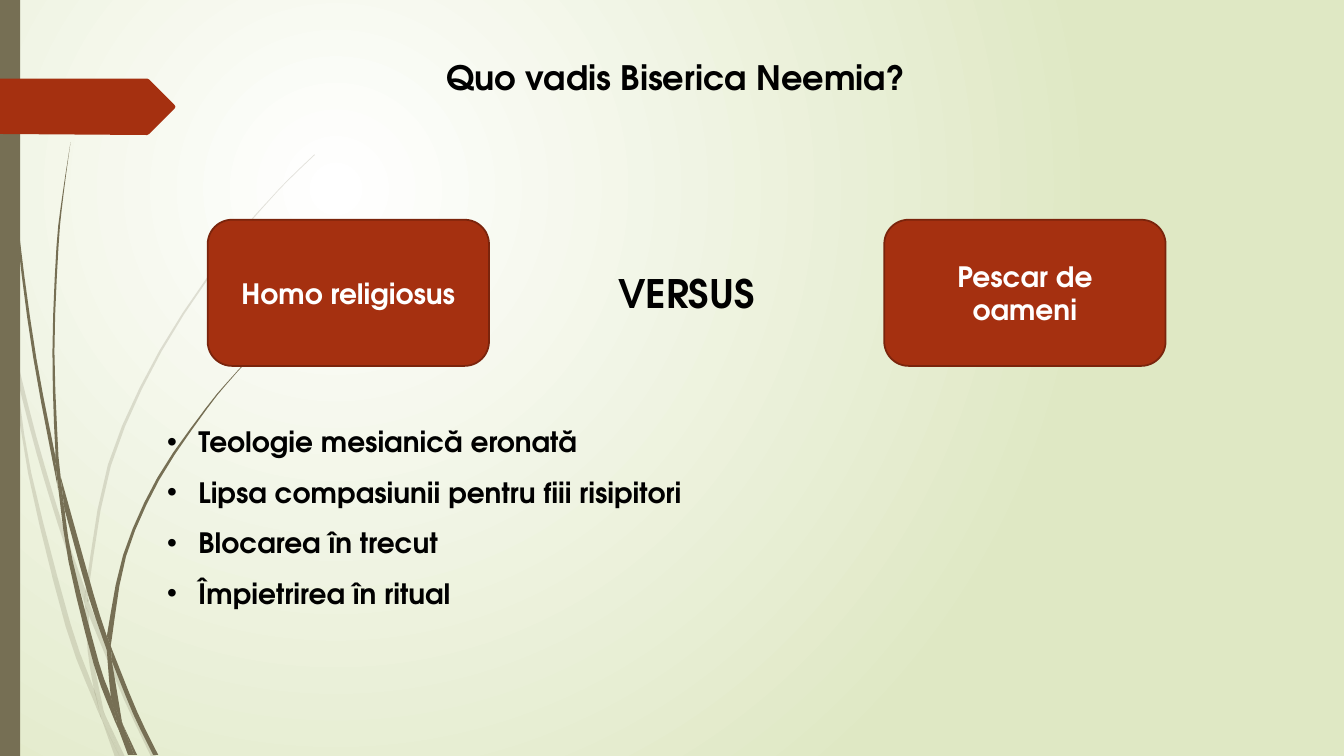
from lxml.etree import SubElement
from pptx import Presentation
from pptx.dml.color import RGBColor
from pptx.enum.shapes import MSO_SHAPE
from pptx.enum.text import MSO_ANCHOR, MSO_AUTO_SIZE, PP_ALIGN
from pptx.oxml import parse_xml
from pptx.oxml.ns import nsdecls, qn
from pptx.util import Pt

PX = 9144
FINE = 100
FONT = "TeX Gyre Adventor"
OLIVE, RUST, RUST_DARK = "766F54", "A53010", "7A240C"
BLACK, WHITE, PALE_GREEN = "000000", "FFFFFF", "DFE8C4"

PALE_BLADES = [
    ([(0, 282), (9, 322), (11, 350)], [(10, 344), (0, 299)]),
    ([(14, 345), (36, 433), (62, 520), (85, 586)], [(84, 599), (58, 522), (36, 449), (17, 376)]),
    ([(88, 596), (92, 607), (127, 692), (155, 751)], [(150, 751), (123, 694), (88, 610)]),
    ([(105, 711), (124, 751)], [(119, 751)]),
    ([(11, 350), (28, 470), (65, 621), (92, 693), (101, 714)],
     [(99, 707), (93, 683), (70, 619), (31, 469), (17, 376)]),
    ([(84, 599), (87, 646), (93, 683), (96, 692), (105, 711)],
     [(103, 706), (91, 646), (88, 610), (88, 608)]),
    ([(312, 153), (289, 175), (268, 197), (228, 244), (158, 348), (107, 461), (85, 584), (85, 586)],
     [(88, 596), (88, 584), (110, 462), (160, 349), (229, 245), (268, 198), (290, 175), (312, 154)]),
    ([(101, 714), (114, 751)], [(119, 751)]),
    ([(85, 586), (84, 599), (88, 608)], [(88, 610), (88, 596)]),
    ([(93, 683), (99, 707), (101, 714), (119, 751)], [(105, 711), (96, 692)]),
]
DARK_BLADES = [
    ([(3, 0), (4, 48), (7, 110), (17, 233), (33, 355), (56, 477), (57, 481)],
     [(55, 457), (55, 453), (36, 355), (19, 232), (8, 109), (5, 48), (4, 0)]),
    ([(60, 472), (93, 590), (106, 631)], [(106, 645), (88, 592), (64, 505)]),
    ([(110, 641), (113, 649), (136, 706), (157, 749)], [(152, 749), (132, 708), (111, 656)]),
    ([(57, 477), (68, 557), (93, 659), (111, 708), (117, 722)],
     [(116, 717), (110, 691), (98, 657), (72, 556), (64, 505)]),
    ([(70, 141), (62, 193), (56, 245), (52, 349), (55, 449), (60, 472)],
     [(58, 453), (54, 349), (58, 245), (63, 193), (70, 141)]),
    ([(122, 719), (136, 749)], [(133, 749)]),
    ([(55, 449), (55, 453), (57, 477), (64, 505)], [(60, 472)]),
    ([(260, 344), (245, 358), (231, 373), (204, 405), (156, 474), (122, 551), (106, 631)],
     [(110, 641), (111, 633), (125, 552), (158, 476), (205, 406), (231, 374), (245, 359), (261, 344)]),
    ([(117, 722), (127, 749)], [(131, 749)]),
    ([(106, 645), (110, 691), (116, 706), (122, 719)], [(121, 716), (111, 656), (109, 651)]),
    ([(106, 631), (106, 645), (109, 651), (111, 656)], [(110, 641)]),
    ([(110, 691), (116, 717), (117, 722), (130, 749)], [(133, 749), (122, 719), (116, 706)]),
]
ARROW = [(0, 78), (146, 78), (148, 79), (173, 104), (174, 106), (173, 108),
         (148, 133), (146, 134), (0, 133)]
CAUSES = [
    "Teologie mesianică eronată",
    "Lipsa compasiunii pentru fiii risipitori",
    "Blocarea în trecut",
    "Împietrirea în ritual",
]


def color(hex_code):
    return RGBColor.from_string(hex_code)


def box(*lengths):
    return [n * PX for n in lengths]


def set_background(s):
    bg = parse_xml(
        f'<p:bg {nsdecls("p", "a")}><p:bgPr><a:gradFill rotWithShape="1"><a:gsLst>'
        f'<a:gs pos="0"><a:srgbClr val="{WHITE}"/></a:gs>'
        f'<a:gs pos="100000"><a:srgbClr val="{PALE_GREEN}"/></a:gs></a:gsLst>'
        '<a:path path="circle"><a:fillToRect l="50000" t="50000" r="100000" b="100000"/>'
        '</a:path></a:gradFill><a:effectLst/></p:bgPr></p:bg>')
    s.element.cSld.insert(0, bg)


def paint(sp, fill, line=None):
    sp.shadow.inherit = False
    sp.fill.solid()
    sp.fill.fore_color.rgb = color(fill)
    if line:
        sp.line.color.rgb = color(line)
        sp.line.width = Pt(1.25)
    else:
        sp.line.fill.background()


def smooth(points, steps=3):
    ends = [points[0], *points, points[-1]]
    curve = []
    for a, b, c, d in zip(ends, ends[1:], ends[2:], ends[3:]):
        for i in range(steps):
            t = i / steps
            curve.append(tuple(
                (2 * q + (r - p) * t + (2 * p - 5 * q + 4 * r - u) * t ** 2
                 + (3 * q - p - 3 * r + u) * t ** 3) / 2
                for p, q, r, u in zip(a, b, c, d)))
    return curve + [points[-1]]


def add_outline(s, points, fill):
    fine = [(round(x * FINE), round(y * FINE)) for x, y in points]
    builder = s.shapes.build_freeform(*fine[0], scale=PX / FINE)
    builder.add_line_segments(fine[1:], close=True)
    sp = builder.convert_to_shape()
    paint(sp, fill)
    return sp


def add_blade(s, down, back, alpha=None):
    sp = add_outline(s, smooth(down) + smooth(back), OLIVE)
    if alpha:
        clr = sp.element.spPr.find(qn("a:solidFill"))[0]
        SubElement(clr, qn("a:alpha"), val=str(alpha * 1000))


def add_shape(s, kind, bounds, fill, line=None):
    sp = s.shapes.add_shape(kind, *box(*bounds))
    paint(sp, fill, line)
    return sp


def write(tf, lines, size, hex_code, align=PP_ALIGN.CENTER, spacing=1.0):
    for i, line in enumerate(lines):
        p = tf.add_paragraph() if i else tf.paragraphs[0]
        p.text = line
        p.alignment = align
        p.line_spacing = spacing
        p.font.name = FONT
        p.font.size = Pt(size)
        p.font.bold = True
        p.font.color.rgb = color(hex_code)


def add_title(s, text, bounds):
    sp = s.shapes.title
    sp.left, sp.top, sp.width, sp.height = box(*bounds)
    tf = sp.text_frame
    tf.auto_size = MSO_AUTO_SIZE.NONE
    tf.vertical_anchor = MSO_ANCHOR.TOP
    write(tf, [text], 24, BLACK)


def add_card(s, text, left):
    sp = add_shape(s, MSO_SHAPE.ROUNDED_RECTANGLE, (left, 218, 279, 145), RUST, RUST_DARK)
    tf = sp.text_frame
    tf.word_wrap = True
    tf.vertical_anchor = MSO_ANCHOR.MIDDLE
    write(tf, [text], 20, WHITE)


def add_label(s, text, bounds):
    tf = s.shapes.add_textbox(*box(*bounds)).text_frame
    tf.word_wrap = False
    write(tf, [text], 28, BLACK)


def add_bullets(s, lines, bounds):
    tf = s.shapes.add_textbox(*box(*bounds)).text_frame
    tf.word_wrap = True
    write(tf, lines, 20, BLACK, PP_ALIGN.LEFT, 1.5)
    for p in tf.paragraphs:
        pPr = p._p.get_or_add_pPr()
        pPr.set("marL", str(31 * PX))
        pPr.set("indent", str(-31 * PX))
        font = parse_xml(f'<a:buFont {nsdecls("a")} typeface="Arial"/>')
        pPr.find(qn("a:defRPr")).addprevious(font)
        font.addnext(parse_xml(f'<a:buChar {nsdecls("a")} char="•"/>'))


def main():
    prs = Presentation()
    prs.slide_width, prs.slide_height = box(1333, 750)
    s = prs.slides.add_slide(prs.slide_layouts[5])
    set_background(s)
    for down, back in PALE_BLADES:
        add_blade(s, down, back, alpha=20)
    for down, back in DARK_BLADES:
        add_blade(s, down, back)
    add_shape(s, MSO_SHAPE.RECTANGLE, (0, 0, 20, 750), OLIVE)
    add_outline(s, ARROW, RUST)
    add_title(s, " Quo vadis Biserica Neemia?", (247, 51, 837, 50))
    add_card(s, "Homo religiosus", 206)
    add_card(s, "Pescar de oameni", 877)
    add_label(s, "VERSUS", (603, 262, 156, 57))
    add_bullets(s, CAUSES, (156, 400, 539, 246))
    prs.save("out.pptx")


if __name__ == "__main__":
    main()
